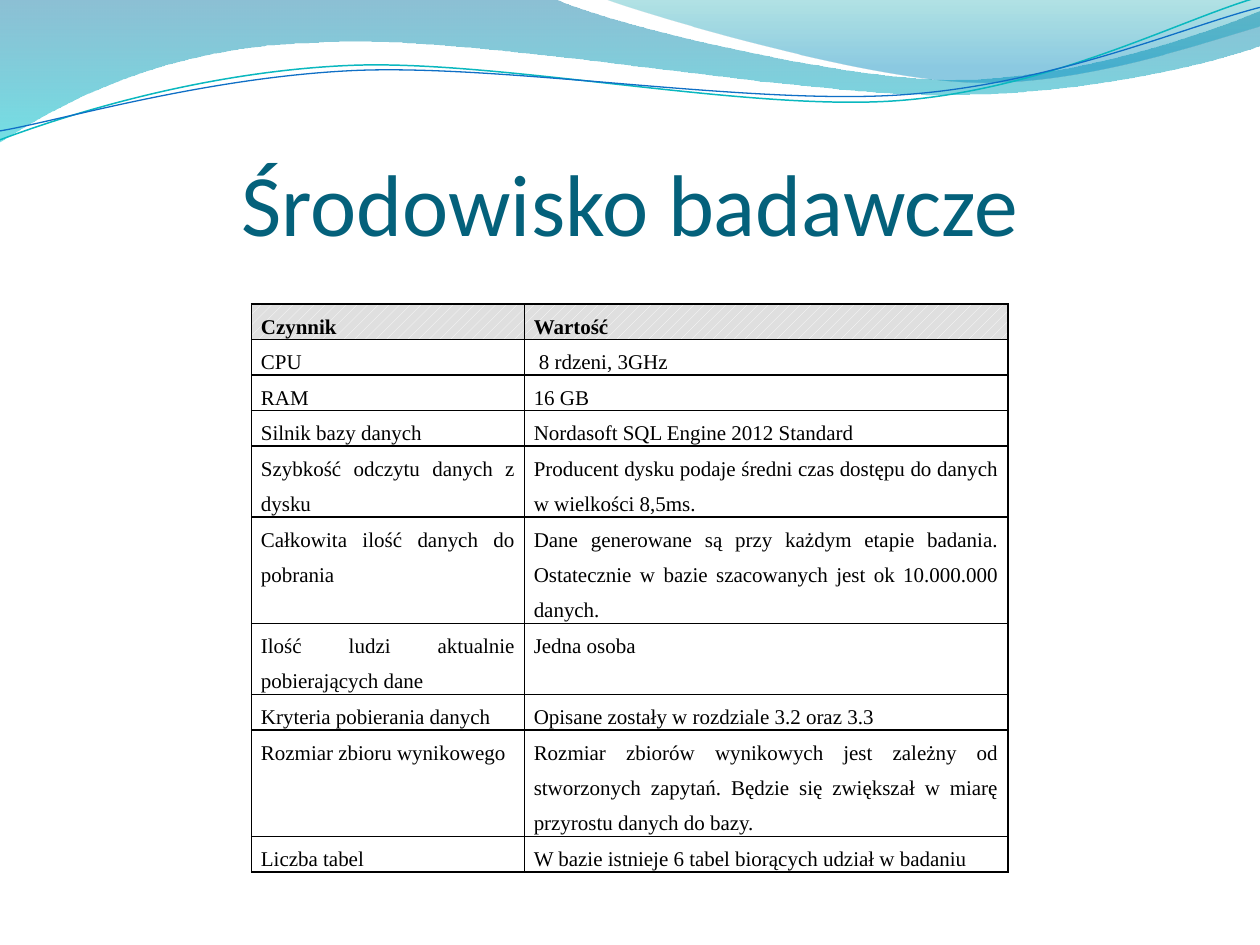
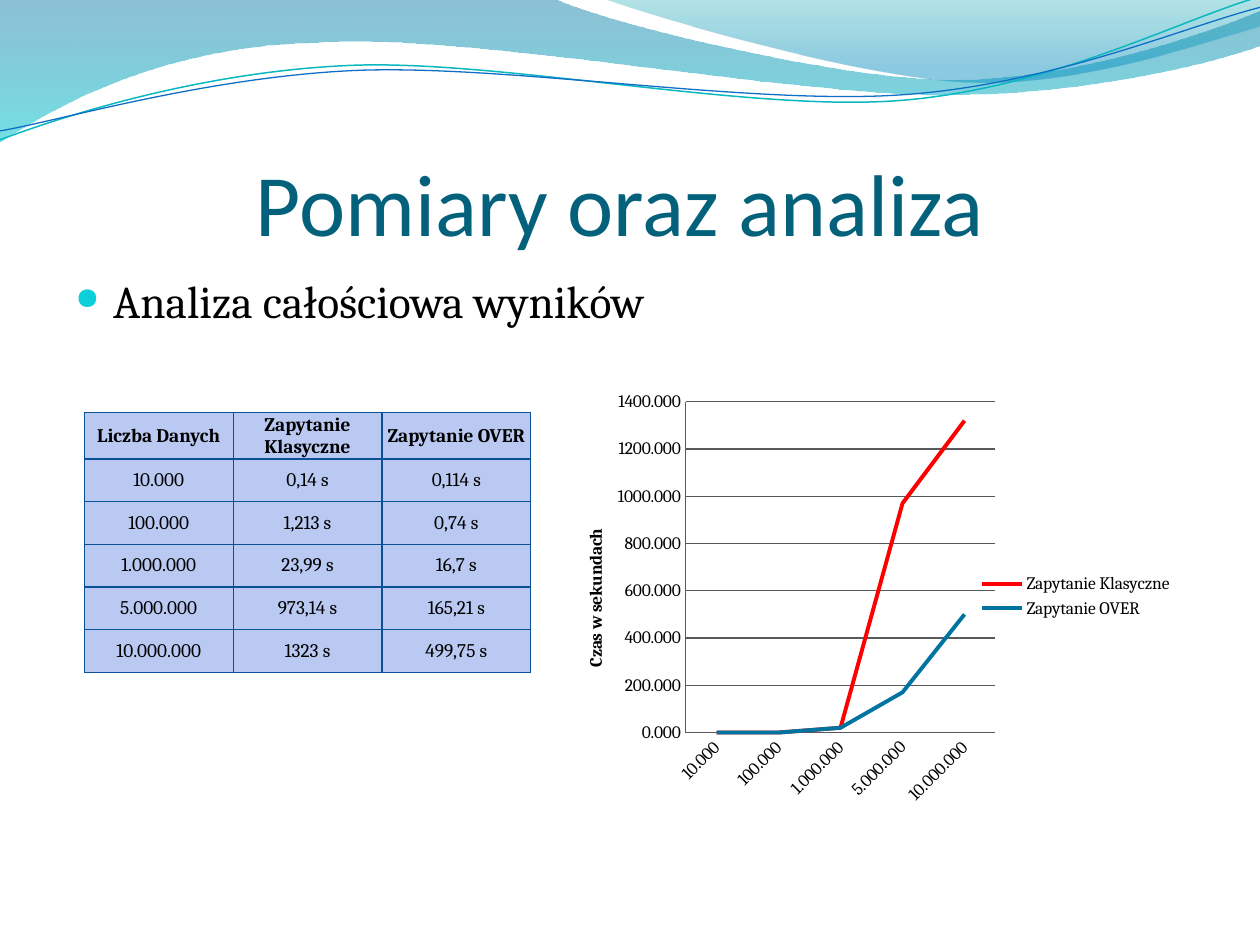
from dataclasses import dataclass

from lxml.etree import SubElement
from pptx import Presentation
from pptx.chart.data import CategoryChartData
from pptx.dml.color import RGBColor
from pptx.enum.chart import XL_CHART_TYPE, XL_LEGEND_POSITION, XL_TICK_MARK
from pptx.enum.dml import MSO_PATTERN
from pptx.enum.text import MSO_ANCHOR, MSO_AUTO_SIZE, PP_ALIGN
from pptx.oxml import parse_xml
from pptx.oxml.ns import nsdecls, qn
from pptx.util import Cm, Pt


@dataclass(frozen=True)
class Theme:
    title: str = "04617B"
    ink: str = "000000"
    white: str = "FFFFFF"
    head: str = "DFDFDF"
    cell: str = "BAC9F1"
    edge: str = "095295"
    bullet: str = "0BD0D9"
    grid: str = "595959"
    red: str = "FF0000"
    blue: str = "0074A1"
    sans: str = "Calibri"
    serif: str = "Cambria"
    roman: str = "Times New Roman"
    big: int = 50
    body: int = 26
    note: int = 12
    data: int = 11
    label: int = 10


theme = Theme()
rgb = RGBColor.from_string


def style(para, face, size, color, bold=False, align=PP_ALIGN.LEFT):
    para.alignment = align
    for run in para.runs:
        font = run.font
        font.name, font.size, font.bold = face, Pt(size), bold
        font.color.rgb = rgb(color)


def grid(slide, rows, left, top, widths, heights, edge, line):
    """Add a table with plain cells and an even border; return its cells by row."""
    frame = slide.shapes.add_table(len(rows), len(widths), Cm(left), Cm(top),
                                   Cm(sum(widths)), Cm(sum(heights)))
    table = frame.table
    table.first_row = table.horz_banding = False
    for col, width in zip(table.columns, widths):
        col.width = Cm(width)
    for row, height, texts in zip(table.rows, heights, rows):
        row.height = Cm(height)
        for cell, text in zip(row.cells, texts):
            cell.text_frame.text = text
            cell.fill.background()
            props = cell._tc.get_or_add_tcPr()
            for i, side in enumerate("LRTB"):
                props.insert(i, parse_xml(
                    f'<a:ln{side} {nsdecls("a")} w="{Pt(line)}"><a:solidFill>'
                    f'<a:srgbClr val="{edge}"/></a:solidFill></a:ln{side}>'))
    return [list(row.cells) for row in table.rows]


deck = Presentation()
deck.slide_width, deck.slide_height = Cm(25.4), Cm(19.05)
layout = deck.slide_layouts[5]

# Titles
slides = []
for text in ("Środowisko badawcze", "Pomiary oraz analiza "):
    slide = deck.slides.add_slide(layout)
    title = slide.shapes.title
    title.left, title.top, title.width, title.height = Cm(1.27), Cm(1.94), Cm(22.86), Cm(3.18)
    frame = title.text_frame
    frame.text = text
    frame.auto_size = MSO_AUTO_SIZE.NONE
    frame.vertical_anchor = MSO_ANCHOR.BOTTOM
    frame.margin_left = frame.margin_right = frame.margin_bottom = 0
    frame.margin_top = Cm(0.13)
    style(frame.paragraphs[0], theme.sans, theme.big, theme.title, align=PP_ALIGN.CENTER)
    slides.append(slide)
setup, results = slides

# Waves on the shared layout: pairs are corners, sixes are Bezier curves (cm).
# Bands carry (position, colour, opacity) stops; strands carry (colour, width).
waves = [
    ([(0, 0), (11.18, -0.02),
      (12.09, 0.43, 16.87, 1.6, 19.25, 1.6), (21.67, 1.6, 24.33, 0.66, 25.4, 0.23),
      (25.43, 0.91),
      (24.97, 1.12, 22.1, 1.93, 18.95, 1.91), (15.8, 1.91, 9.7, 0.71, 6.53, 0.86),
      (3.28, 0.91, 1.17, 2.11, -0.03, 2.87), (0, 0)],
     [(0, "0074A1", 45), (1, "00C6CF", 55)], None),
    ([(12.17, -0.02), (12.93, 0.28, 17.32, 1.57, 19.53, 1.65),
      (21.74, 1.75, 24.41, 0.81, 25.4, 0.53), (25.4, 0), (12.17, -0.02)],
     [(0, "00A1A9", 30), (0.8, "008BBF", 45)], None),
    ([(0, 2.82), (1.22, 2.36, 4.01, 1.45, 7.04, 1.32),
      (10.03, 1.19, 15.06, 2.26, 18.11, 2.03), (21.16, 1.8, 23.83, 0.38, 25.35, -0.05)],
     None, ("0AB8BF", 0.85)),
    ([(0, 2.64), (1.19, 2.44, 4.17, 1.55, 7.19, 1.42),
      (10.24, 1.3, 15.16, 2.13, 18.21, 1.91), (21.23, 1.7, 23.9, 0.53, 25.4, 0.15)],
     None, ("0F6FC6", 0.75)),
]
for rank, (parts, stops, strand) in enumerate(waves):
    ends = [(Cm(part[-2]), Cm(part[-1])) for part in parts]
    pen = setup.shapes.build_freeform(*ends[0])
    pen.add_line_segments(ends[1:], close=bool(stops))
    wave = pen.convert_to_shape()
    wave.shadow.inherit = False
    for node, part in zip(list(wave.element.iter(qn("a:lnTo"))), parts[1:]):
        if len(part) == 6:
            curve = parse_xml(f'<a:cubicBezTo {nsdecls("a")}/>')
            for x, y in zip(part[::2], part[1::2]):
                SubElement(curve, qn("a:pt"), x=str(Cm(x) - wave.left),
                           y=str(Cm(y) - wave.top))
            node.getparent().replace(node, curve)
    if stops:
        wave.line.fill.background()
        wave.fill.gradient()
        wave.fill.gradient_angle = 270
        for stop, (place, color, _) in zip(wave.fill.gradient_stops, stops):
            stop.position = place
            stop.color.rgb = rgb(color)
        fills = wave.element.spPr.find(qn("a:gradFill")).iter(qn("a:srgbClr"))
        for node, (_, _, alpha) in zip(list(fills), stops):
            SubElement(node, qn("a:alpha"), val=str(alpha * 1000))
    else:
        wave.fill.background()
        wave.line.color.rgb = rgb(strand[0])
        wave.line.width = Pt(strand[1])
    wave.element.nvSpPr.cNvPr.set("id", str(20 + rank))
    layout.shapes.element.append(wave.element)

# Slide 1: test environment, each row with its count of text lines
facts = [
    ("Czynnik", "Wartość", 1),
    ("CPU", " 8 rdzeni, 3GHz", 1),
    ("RAM", "16 GB", 1),
    ("Silnik bazy danych", "Nordasoft SQL Engine 2012 Standard", 1),
    ("Szybkość odczytu danych z dysku",
     "Producent dysku podaje średni czas dostępu do danych w wielkości 8,5ms.", 2),
    ("Całkowita ilość danych do pobrania",
     "Dane generowane są przy każdym etapie badania. Ostatecznie w bazie "
     "szacowanych jest ok 10.000.000 danych.", 3),
    ("Ilość ludzi aktualnie pobierających dane", "Jedna osoba", 2),
    ("Kryteria pobierania danych", "Opisane zostały w rozdziale 3.2 oraz 3.3", 1),
    ("Rozmiar zbioru wynikowego",
     "Rozmiar zbiorów wynikowych jest zależny od stworzonych zapytań. "
     "Będzie się zwiększał w miarę przyrostu danych do bazy.", 3),
    ("Liczba tabel", "W bazie istnieje 6 tabel biorących udział w badaniu", 1),
]
unit = 11.45 / sum(fact[2] for fact in facts)
cells = grid(setup, [fact[:2] for fact in facts], 5.07, 6.13, (5.5, 9.75),
             [unit * fact[2] for fact in facts], theme.ink, 1)
for i, row in enumerate(cells):
    for cell in row:
        cell.margin_left = cell.margin_right = Cm(0.19)
        cell.margin_top = cell.margin_bottom = 0
        para = cell.text_frame.paragraphs[0]
        para.line_spacing = 1.5
        style(para, theme.roman, theme.note, theme.ink, i == 0, PP_ALIGN.JUSTIFY)
        if i == 0:
            cell.fill.patterned()
            cell.fill.pattern = MSO_PATTERN.PERCENT_20
            cell.fill.fore_color.rgb = rgb(theme.white)
            cell.fill.back_color.rgb = rgb(theme.head)

# Slide 2: bullet
box = results.shapes.add_textbox(Cm(1.27), Cm(5.38), Cm(22.86), Cm(12.19))
box.text_frame.word_wrap = True
para = box.text_frame.paragraphs[0]
para.text = "Analiza całościowa wyników"
para.space_before = Pt(5)
style(para, theme.serif, theme.body, theme.ink)
props = para._p.get_or_add_pPr()
props.set("marL", str(Cm(0.76)))
props.set("indent", str(-Cm(0.76)))
SubElement(SubElement(props, qn("a:buClr")), qn("a:srgbClr"), val=theme.bullet)
SubElement(props, qn("a:buSzPct"), val="67000")
SubElement(props, qn("a:buChar"), char="●")

# Slide 2: chart of the times, in seconds
data = CategoryChartData(number_format="0.000")
data.categories = ["10.000", "100.000", "1.000.000", "5.000.000", "10.000.000"]
data.add_series("Zapytanie Klasyczne", (0, 0, 20, 970, 1320))
data.add_series("Zapytanie OVER", (0, 0, 20, 170, 500))
wide, high = 12.19, 8.99
chart = results.shapes.add_chart(XL_CHART_TYPE.LINE, Cm(11.71), Cm(7.52),
                                 Cm(wide), Cm(high), data).chart
chart.has_title = False
chart.font.name, chart.font.size = theme.serif, Pt(theme.label)
chart.font.color.rgb = rgb(theme.ink)
chart.has_legend = True
chart.legend.position = XL_LEGEND_POSITION.RIGHT
chart.legend.include_in_layout = False
chart.plots[0].vary_by_categories = False
for line, color in zip(chart.plots[0].series, (theme.red, theme.blue)):
    line.smooth = False
    line.format.line.color.rgb = rgb(color)
    line.format.line.width = Pt(2.25)

ranks, values = chart.category_axis, chart.value_axis
for axis in (ranks, values):
    axis.major_tick_mark = axis.minor_tick_mark = XL_TICK_MARK.NONE
    axis.format.line.color.rgb = rgb(theme.grid)
    axis.tick_labels.font.size = Pt(theme.label)
turn = ranks._element.find(qn("c:txPr")).find(qn("a:bodyPr"))
turn.set("rot", str(-45 * 60000))
values.minimum_scale, values.maximum_scale, values.major_unit = 0, 1400, 200
values.tick_labels.number_format = "0.000"
values.tick_labels.number_format_is_linked = False
values.major_gridlines.format.line.color.rgb = rgb(theme.grid)
values.axis_title.text_frame.text = "Czas w sekundach"
style(values.axis_title.text_frame.paragraphs[0], theme.serif, theme.label, theme.ink,
      True, PP_ALIGN.CENTER)

area = chart._chartSpace.chart.plotArea
for old in area.findall(qn("c:layout")):
    area.remove(old)
place = parse_xml(f'<c:layout {nsdecls("c")}><c:manualLayout/></c:layout>')
area.insert(0, place)
for tag, val in (("layoutTarget", "inner"), ("xMode", "edge"), ("yMode", "edge"),
                 ("x", 2.11 / wide), ("y", 0.58 / high),
                 ("w", 6.25 / wide), ("h", 6.67 / high)):
    SubElement(place[0], qn("c:" + tag), val=str(val))

# Slide 2: measured times
times = [
    ("Liczba Danych", "Zapytanie Klasyczne", "Zapytanie OVER"),
    ("10.000", "0,14 s", "0,114 s"),
    ("100.000", "1,213 s", "0,74 s"),
    ("1.000.000", "23,99 s", "16,7 s"),
    ("5.000.000", "973,14 s", "165,21 s"),
    ("10.000.000", "1323 s", "499,75 s"),
]
cells = grid(results, times, 1.7, 8.32, [3] * 3, [0.91] + [0.86] * 5, theme.edge, 0.75)
for i, row in enumerate(cells):
    for cell in row:
        cell.margin_left = cell.margin_right = Cm(0.03)
        cell.margin_top = cell.margin_bottom = 0
        cell.vertical_anchor = MSO_ANCHOR.MIDDLE
        cell.fill.solid()
        cell.fill.fore_color.rgb = rgb(theme.cell)
        style(cell.text_frame.paragraphs[0], theme.serif, theme.data, theme.ink,
              i == 0, PP_ALIGN.CENTER)

deck.save("out.pptx")
